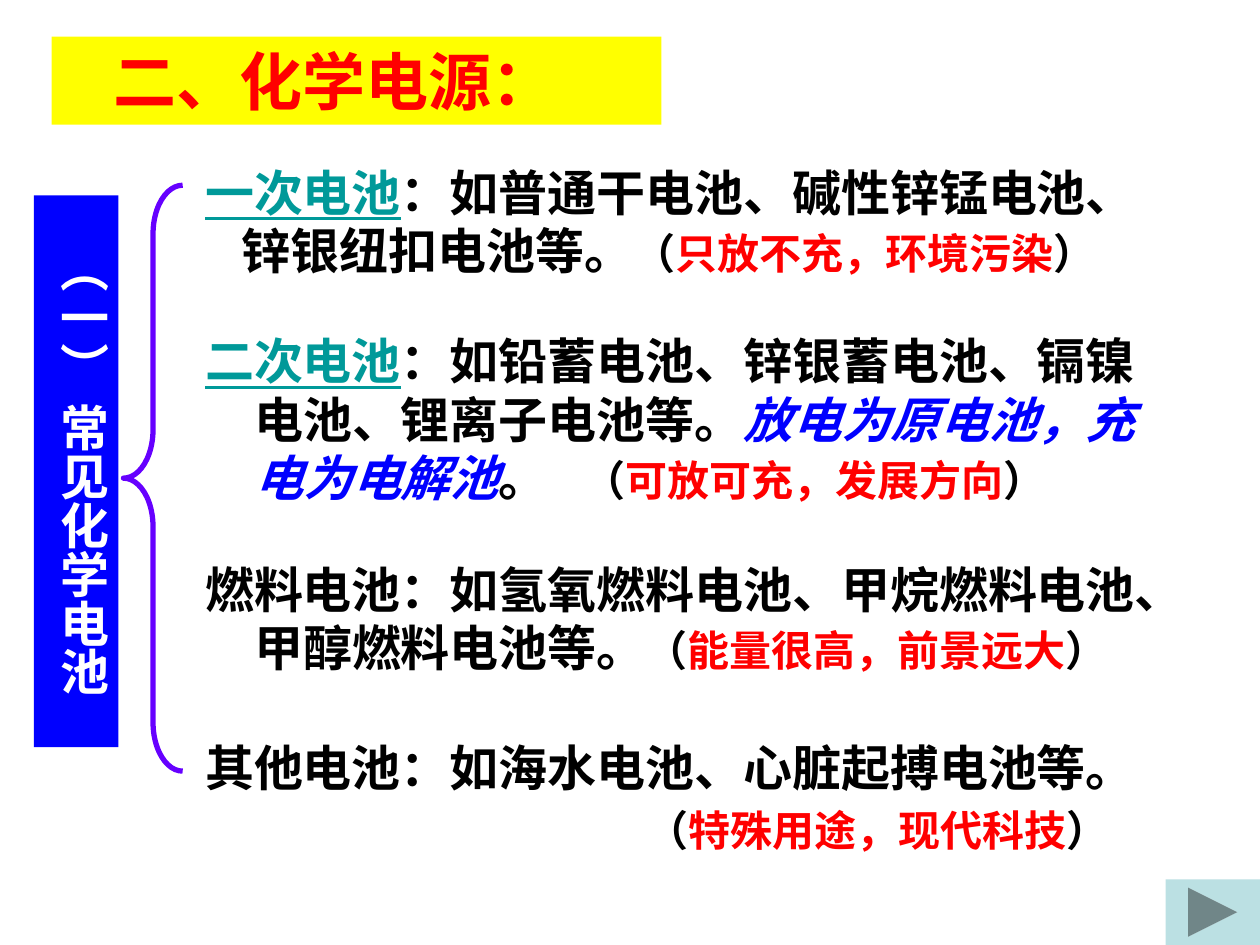
from pptx import Presentation
from pptx.dml.color import RGBColor
from pptx.enum.shapes import MSO_SHAPE
from pptx.enum.text import MSO_ANCHOR, MSO_AUTO_SIZE, PP_ALIGN
from pptx.oxml.ns import qn
from pptx.util import Inches, Pt
from lxml.etree import SubElement

# Colours
BLACK = RGBColor(0, 0, 0)
WHITE = RGBColor(255, 255, 255)
RED = RGBColor(255, 0, 0)
BLUE = RGBColor(0, 0, 255)
YELLOW = RGBColor(255, 255, 0)
TEAL = RGBColor(0, 0x99, 0x99)
PURPLE = RGBColor(0x66, 0, 255)
PALE = RGBColor(0xBB, 0xE0, 0xE3)

# Grid of 100 columns by 75 rows
CELL = Inches(0.1)
LATIN, HAN = "Times New Roman", "Noto Sans CJK SC"
BODY, NOTE, HEAD = 28, 24, 36
LEAD = 33.4           # line pitch in points
SPACE = BODY / 4      # width of one blank in points
TERM = dict(color=TEAL, line=True)
SLANT = dict(color=BLUE, slant=True)

# Each group: column, row, width, height, then lines of (indent in blanks, runs)
GROUPS = [
    (15.3, 12.2, 79.1, 10.3, [
        (0, [("一次电池", TERM), ("：如普通干电池、碱性锌锰电池、", {})]),
        (3, [("锌银纽扣电池等。", {}), "只放不充，环境污染"])]),
    (15.3, 25.6, 79.1, 15, [
        (0, [("二次电池", TERM), ("：如铅蓄电池、锌银蓄电池、镉镍", {})]),
        (4, [("电池、锂离子电池等。", {}), ("放电为原电池，充", SLANT)]),
        (4, [("电为电解池", SLANT), ("。\t", {}), "可放可充，发展方向"])]),
    (15.3, 43.7, 79.8, 10.3, [
        (0, [("燃料电池：如氢氧燃料电池、甲烷燃料电池、", {})]),
        (4, [("甲醇燃料电池等。", {}), "能量很高，前景远大"])]),
    (15.3, 57.9, 77.2, 10.3, [
        (0, [("其他电池：如海水电池、心脏起搏电池等。", {})]),
        (36, ["特殊用途，现代科技"])]),
]


def place(*cells):
    return [round(n * CELL) for n in cells]


def write(para, text, size=BODY, color=BLACK, font=LATIN, line=False, slant=False):
    run = para.add_run()
    run.text = text
    face = run.font
    face.name, face.size, face.bold = font, Pt(size), True
    face.color.rgb = color
    face.underline, face.italic = line, slant
    SubElement(run._r.get_or_add_rPr(), qn("a:ea")).set("typeface", HAN)


def remark(para, text):
    """A red remark between black brackets."""
    for part, color in (("（", BLACK), (text, RED), ("）", BLACK)):
        write(para, part, size=NOTE, color=color)


def indent(para, blanks, pitch=LEAD):
    para.alignment = PP_ALIGN.LEFT
    if pitch:
        para.line_spacing = Pt(pitch)
    props = para._p.get_or_add_pPr()
    props.set("marL", "0")
    props.set("indent", str(Pt(blanks * SPACE)))
    return props


def group(slide, left, top, width, height, lines):
    frame = slide.shapes.add_textbox(*place(left, top, width, height)).text_frame
    frame.word_wrap = False
    frame.auto_size = MSO_AUTO_SIZE.SHAPE_TO_FIT_TEXT
    frame.margin_top, frame.margin_bottom = Inches(0.07), Inches(0.03)
    for row, (blanks, runs) in enumerate(lines):
        para = frame.add_paragraph() if row else frame.paragraphs[0]
        props = indent(para, blanks)
        if any("\t" in run[0] for run in runs):
            stops = SubElement(props, qn("a:tabLst"))
            SubElement(stops, qn("a:tab"), pos=str(Inches(3.5)), algn="l")
        for run in runs:
            if isinstance(run, str):
                remark(para, run)
            else:
                write(para, run[0], **run[1])


def shape(slide, kind, cells, fill=None):
    item = slide.shapes.add_shape(kind, *place(*cells))
    item.shadow.inherit = False
    item.line.fill.background()
    if fill is None:
        item.fill.background()
    else:
        item.fill.solid()
        item.fill.fore_color.rgb = fill
    return item


def title(slide):
    frame = shape(slide, MSO_SHAPE.RECTANGLE, (4.1, 2.9, 48.4, 7), YELLOW).text_frame
    frame.vertical_anchor = MSO_ANCHOR.MIDDLE
    para = frame.paragraphs[0]
    indent(para, 4, pitch=None)
    write(para, "二、化学电源：", size=HEAD, color=RED, font=HAN)


def banner(slide):
    frame = shape(slide, MSO_SHAPE.RECTANGLE, (2.7, 15.5, 6.7, 43.8), BLUE).text_frame
    frame.vertical_anchor = MSO_ANCHOR.TOP
    frame._txBody.bodyPr.set("vert", "eaVert")
    para = frame.paragraphs[0]
    indent(para, 3)
    write(para, "（一） 常见化学电池", color=WHITE)


def brace(slide):
    item = shape(slide, MSO_SHAPE.LEFT_BRACE, (9.8, 14.7, 4.7, 46.5))
    item.adjustments[0], item.adjustments[1] = 0.82, 0.5
    item.line.color.rgb = PURPLE
    item.line.width = Pt(3)


def main():
    deck = Presentation()
    deck.slide_width, deck.slide_height = place(100, 75)
    slide = deck.slides.add_slide(deck.slide_layouts[6])
    # Battery kinds
    for item in GROUPS:
        group(slide, *item)
    # Heading, brace and side banner
    title(slide)
    brace(slide)
    banner(slide)
    # Forward button in the corner
    shape(slide, MSO_SHAPE.ACTION_BUTTON_FORWARD_OR_NEXT, (92.5, 69.8, 7.5, 5.2), PALE)
    deck.save("out.pptx")


if __name__ == "__main__":
    main()
